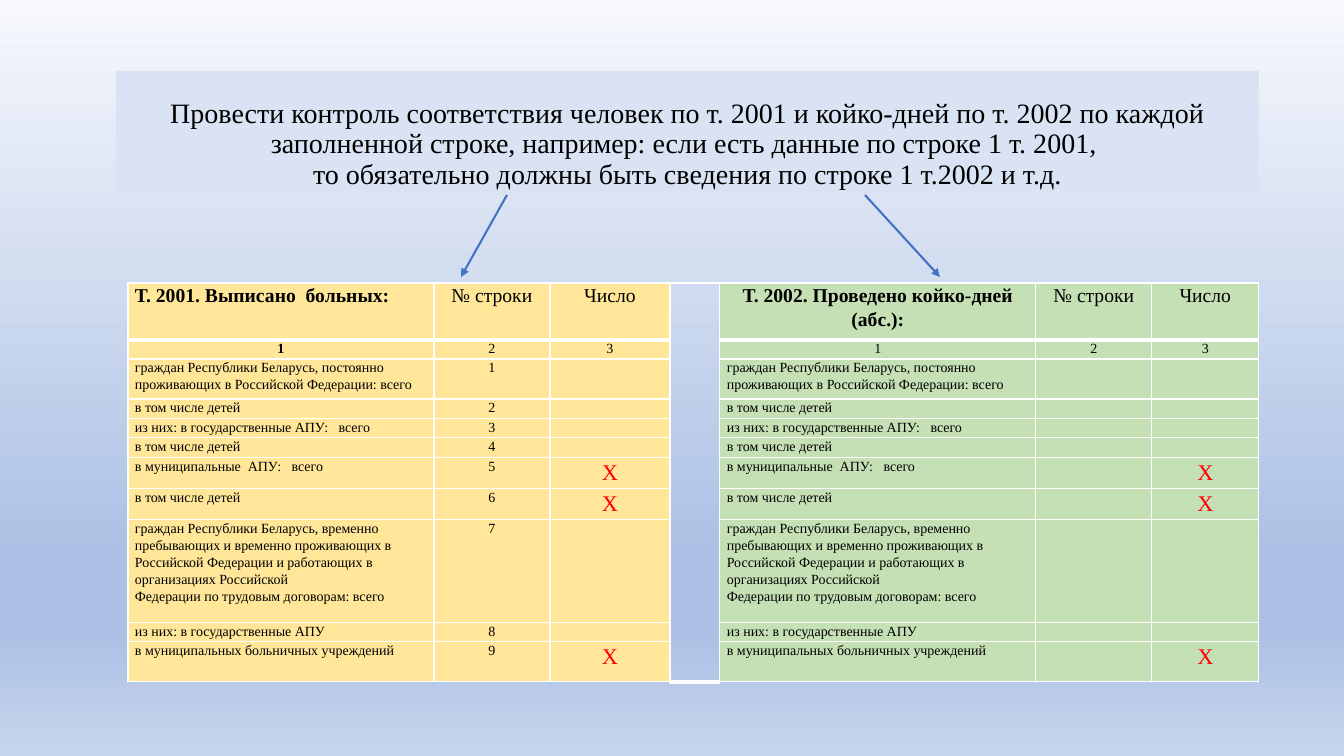
from dataclasses import dataclass

from lxml.etree import SubElement
from pptx import Presentation
from pptx.dml.color import RGBColor as Rgb
from pptx.enum.shapes import MSO_CONNECTOR as Connector, MSO_SHAPE as Shape
from pptx.enum.text import MSO_ANCHOR as Anchor, PP_ALIGN as Align
from pptx.oxml.ns import qn
from pptx.util import Emu, Pt

PX_PER_INCH = 100.8


@dataclass(frozen=True)
class Theme:
    font: str = "Times New Roman"
    title_size: int = 20
    header_size: int = 14
    body_size: int = 10
    cross_size: int = 16
    text: str = "000000"
    cross: str = "FF0000"
    border: str = "FFFFFF"
    arrow: str = "4472C4"
    title_fill: str = "DAE3F3"
    patients_fill: str = "FFE699"
    days_fill: str = "C5E0B4"
    backdrop: tuple = ((0, "F6F8FC"), (74, "ABC0E4"), (83, "ABC0E4"), (100, "C7D5ED"))


THEME = Theme()

TITLE = (
    "Провести контроль соответствия человек по т. 2001 и койко-дней по т. 2002 "
    "по каждой заполненной строке, например: если есть данные по строке 1 т. 2001, "
    "\vто обязательно должны быть сведения по строке 1 т.2002 и т.д."
)
PATIENTS_HEADER = "Т. 2001. Выписано  больных:"
DAYS_HEADER = "Т. 2002. Проведено койко-дней (абс.):"
COLUMN_WIDTHS = (306, 116, 120, 50, 316, 116, 107)
GAP_COLUMN = 3
HEADER_HEIGHTS = (57, 19)
# row height, label, whether the count is crossed out
LINES = (
    (40, "граждан Республики Беларусь, постоянно проживающих в Российской Федерации: всего", False),
    (20, "в том числе детей", False),
    (19, "из них: в государственные АПУ:   всего", False),
    (20, "в том числе детей", False),
    (31, "в муниципальные  АПУ:   всего", True),
    (31, "в том числе детей", True),
    (103, "граждан Республики Беларусь, временно пребывающих и временно проживающих "
          "в Российской Федерации и работающих в  организациях Российской\n"
          "Федерации по трудовым договорам: всего", False),
    (19, "из них: в государственные АПУ", False),
    (40, "в муниципальных больничных учреждений", True),
)


def px(length):
    return Emu(round(length * 914400 / PX_PER_INCH))


def paint_background(page):
    fill = page.background.fill
    fill.gradient()
    fill.gradient_angle = 270
    stops = page.background._cSld.find(".//" + qn("a:gsLst"))
    for stop in list(stops):
        stops.remove(stop)
    for percent, color in THEME.backdrop:
        stop = SubElement(stops, qn("a:gs"), pos=str(percent * 1000))
        SubElement(stop, qn("a:srgbClr"), val=color)


def format_text(frame, size, color=THEME.text, bold=False, align=Align.CENTER, spacing=1.1):
    for para in frame.paragraphs:
        para.alignment = align
        para.line_spacing = spacing
        for span in para.runs:
            span.font.name = THEME.font
            span.font.size = Pt(size)
            span.font.bold = bold
            span.font.color.rgb = Rgb.from_string(color)
        if not para.runs:
            # keeps an empty cell from stretching its row
            SubElement(para._p, qn("a:endParaRPr"), sz=str(size * 100))


def add_title(page):
    box = page.shapes.add_shape(Shape.RECTANGLE, px(116), px(71), px(1143), px(124))
    box.shadow.inherit = False
    box.fill.solid()
    box.fill.fore_color.rgb = Rgb.from_string(THEME.title_fill)
    box.line.fill.background()
    frame = box.text_frame
    frame.word_wrap = True
    frame.vertical_anchor = Anchor.BOTTOM
    frame.text = TITLE
    format_text(frame, THEME.title_size, spacing=0.9)


def add_arrow(page, start, end):
    arrow = page.shapes.add_connector(Connector.STRAIGHT, *map(px, start + end))
    arrow.line.color.rgb = Rgb.from_string(THEME.arrow)
    arrow.line.width = Pt(1.5)
    SubElement(arrow.line._get_or_add_ln(), qn("a:tailEnd"), type="triangle")
    SubElement(arrow._element.spPr, qn("a:effectLst"))


def set_borders(cell, bottom):
    """Draw white edges, with the bottom one in its own width in points."""
    properties = cell._tc.get_or_add_tcPr()
    for index, (side, width) in enumerate((("L", 1), ("R", 1), ("T", 1), ("B", bottom))):
        edge = SubElement(properties, qn("a:ln" + side), w=str(Pt(width)))
        fill = SubElement(edge, qn("a:solidFill"))
        SubElement(fill, qn("a:srgbClr"), val=THEME.border)
        properties.insert(index, edge)


def fill_cell(cell, text, fill, size=THEME.body_size, bottom=1, **style):
    cell.margin_left = cell.margin_right = px(7)
    cell.margin_top = cell.margin_bottom = 0
    cell.text_frame.text = text
    format_text(cell.text_frame, size, **style)
    cell.fill.solid()
    cell.fill.fore_color.rgb = Rgb.from_string(fill)
    set_borders(cell, bottom)


def fill_form(table, first, header, fill, header_align, numbered):
    """Fill the three columns of one form, starting at column `first`."""
    for offset, text in enumerate((header, "№ строки", "Число")):
        is_label = offset == 0
        fill_cell(table.cell(0, first + offset), text, fill, THEME.header_size, 3,
                  bold=is_label, align=header_align if is_label else Align.CENTER)
        fill_cell(table.cell(1, first + offset), str(offset + 1), fill,
                  bold=is_label and numbered)
    for number, (_, label, crossed) in enumerate(LINES, 1):
        row = number + 1
        fill_cell(table.cell(row, first), label, fill, align=Align.LEFT)
        fill_cell(table.cell(row, first + 1), str(number) if numbered else "", fill)
        if crossed:
            fill_cell(table.cell(row, first + 2), "Х", fill, THEME.cross_size, color=THEME.cross)
        else:
            fill_cell(table.cell(row, first + 2), "", fill)


def merge_gap(table):
    last_row = len(table.rows) - 1
    gap = table.cell(0, GAP_COLUMN)
    gap.merge(table.cell(last_row, GAP_COLUMN))
    for row in range(last_row + 1):
        cell = table.cell(row, GAP_COLUMN)
        cell.margin_top = cell.margin_bottom = 0
        cell.fill.background()
        format_text(cell.text_frame, THEME.body_size)
    set_borders(gap, 3)


def add_forms_table(page):
    heights = HEADER_HEIGHTS + tuple(line[0] for line in LINES)
    table = page.shapes.add_table(
        len(heights), len(COLUMN_WIDTHS), px(128), px(283),
        px(sum(COLUMN_WIDTHS)), px(sum(heights))).table
    table.first_row = table.horz_banding = False
    for column, width in zip(table.columns, COLUMN_WIDTHS):
        column.width = px(width)
    for row, height in zip(table.rows, heights):
        row.height = px(height)
    fill_form(table, 0, PATIENTS_HEADER, THEME.patients_fill, Align.LEFT, True)
    fill_form(table, GAP_COLUMN + 1, DAYS_HEADER, THEME.days_fill, Align.CENTER, False)
    merge_gap(table)


def main():
    deck = Presentation()
    deck.slide_width, deck.slide_height = px(1344), px(756)
    page = deck.slides.add_slide(deck.slide_layouts[6])
    paint_background(page)
    add_title(page)
    add_forms_table(page)
    add_arrow(page, (507, 195), (461, 277))
    add_arrow(page, (865, 195), (940, 277))
    deck.save("out.pptx")


if __name__ == "__main__":
    main()
